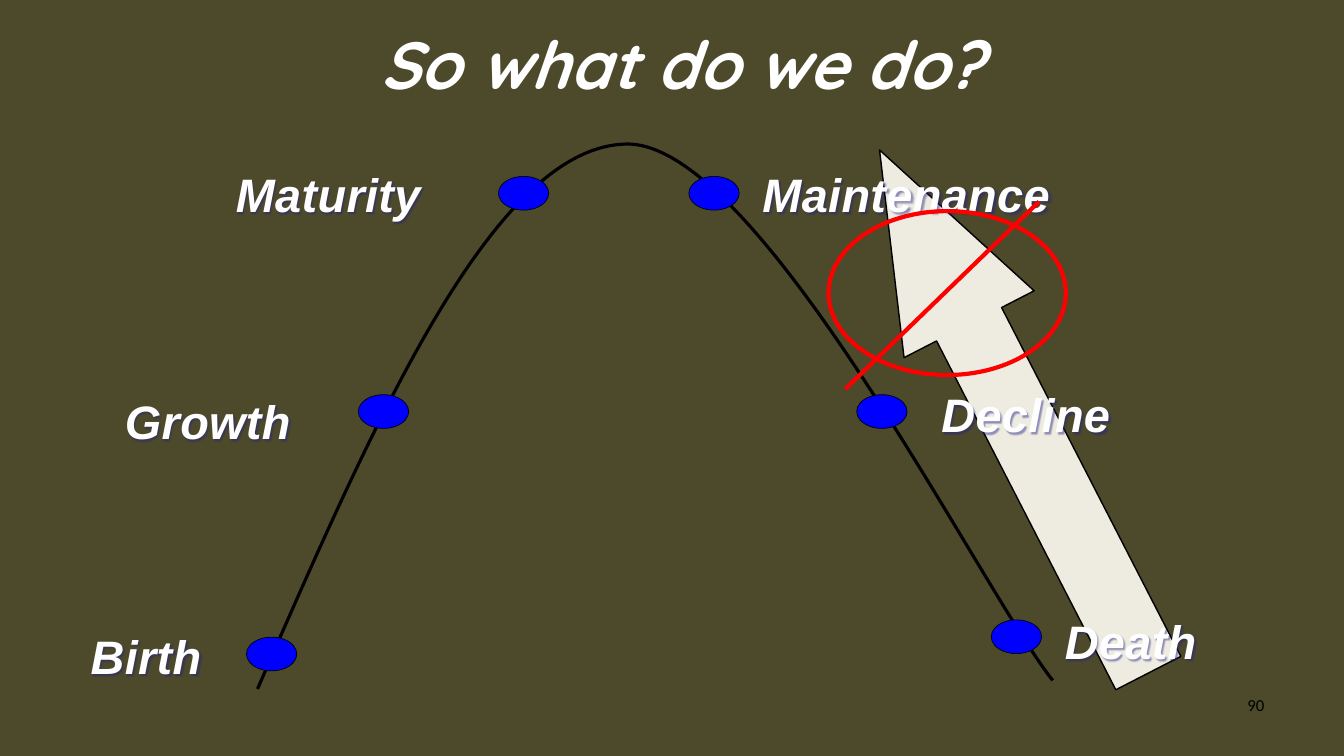
from dataclasses import dataclass

from lxml import etree
from pptx import Presentation
from pptx import util as u
from pptx.dml.color import RGBColor
from pptx.enum import shapes, text
from pptx.oxml import parse_xml
from pptx.oxml.ns import nsdecls, qn


@dataclass
class Theme:
    olive: str = "4D492B"
    cream: str = "EEECE1"
    white: str = "FFFFFF"
    soft_white: str = "FEFEFE"
    black: str = "000000"
    blue: str = "0000FF"
    red: str = "FF0000"
    shadow: str = "202086"
    title_size: int = 95
    label_size: int = 67
    number_size: int = 24


theme = Theme()


def add_text(page, words, left, top, width, height, *, font, size, color,
             bold=False, align=text.PP_ALIGN.LEFT, anchor=text.MSO_ANCHOR.TOP,
             wrap=False, spacing=None, shadow=None):
    box = page.shapes.add_textbox(u.Cm(left), u.Cm(top), u.Cm(width), u.Cm(height))
    frame = box.text_frame
    frame.word_wrap = wrap
    frame.vertical_anchor = anchor
    frame.margin_left = frame.margin_right = u.Cm(0.61)
    frame.margin_top = frame.margin_bottom = u.Cm(0.3)
    para = frame.paragraphs[0]
    para.alignment = align
    span = para.add_run()
    span.text = words
    span.font.name = font
    span.font.size = u.Pt(size)
    span.font.bold = span.font.italic = bold
    span.font.color.rgb = RGBColor.from_string(color)
    if spacing:
        span.font._element.set("spc", str(spacing))
    if shadow:
        box._element.spPr.append(parse_xml(
            f'<a:effectLst {nsdecls("a")}><a:outerShdw blurRad="25400" dist="38100" '
            f'dir="2700000" algn="tl" rotWithShape="0"><a:srgbClr val="{shadow}">'
            '<a:alpha val="45000"/></a:srgbClr></a:outerShdw></a:effectLst>'))
    return box


def paint(shape, line, width, fill=None):
    shape.shadow.inherit = False
    shape.line.color.rgb = RGBColor.from_string(line)
    shape.line.width = u.Pt(width)
    if fill:
        shape.fill.solid()
        shape.fill.fore_color.rgb = RGBColor.from_string(fill)
    else:
        shape.fill.background()


deck = Presentation()
deck.slide_width, deck.slide_height = u.Cm(67.74), u.Cm(38.1)
page = deck.slides.add_slide(deck.slide_layouts[6])
page.background.fill.solid()
page.background.fill.fore_color.rgb = RGBColor.from_string(theme.olive)

add_text(page, "90", 48.54, 34.72, 15.8, 2.64, font="Calibri",
         size=theme.number_size, color=theme.black, align=text.PP_ALIGN.RIGHT, wrap=True)

arrow = page.shapes.add_shape(shapes.MSO_SHAPE.UP_ARROW,
                              u.Cm(47.42), u.Cm(5.92), u.Cm(7.37), u.Cm(29.64))
arrow.adjustments[0], arrow.adjustments[1] = 0.5, 1.34
arrow.rotation = 332.8
paint(arrow, theme.black, 2, theme.cream)

add_text(page, "So what do we do?", 3.81, 0, 61.11, 6.35, font="Quicksand",
         size=theme.title_size, color=theme.white, bold=True, wrap=True,
         align=text.PP_ALIGN.CENTER, anchor=text.MSO_ANCHOR.MIDDLE)

curve_points = [(12.98, 34.72), (18.95, 21.03), (24.92, 7.34), (31.6, 7.26),
                (38.28, 7.19), (49.48, 29.79), (53.06, 34.29)]
start, *controls = [(u.Cm(x), u.Cm(y)) for x, y in curve_points]
builder = page.shapes.build_freeform(*start)
builder.add_line_segments(controls, close=False)
curve = builder.convert_to_shape()
paint(curve, theme.black, 4.5)
segments = list(curve._element.iter(qn("a:lnTo")))
outline = segments[0].getparent()
for first in range(0, len(segments), 3):
    bend = etree.SubElement(outline, qn("a:cubicBezTo"))
    for segment in segments[first:first + 3]:
        bend.append(segment[0])
        outline.remove(segment)

stages = [
    ("Birth", 3.96, 31.34, 7.44, 12.42, 32.11),
    ("Growth", 5.69, 19.48, 10.24, 18.06, 19.89),
    ("Maturity", 11.28, 8.05, 11.2, 25.12, 8.89),
    ("Maintenance", 37.82, 8.05, 16.99, 34.72, 8.89),
    ("Decline", 46.84, 19.15, 10.39, 43.18, 19.89),
    ("Death", 53.06, 30.58, 8.51, 49.96, 31.24),
]
for name, left, top, width, dot_left, dot_top in stages:
    label = add_text(page, name, left, top, width, 3.48, font="Arial",
                     size=theme.label_size, color=theme.soft_white, bold=True,
                     spacing=50, shadow=theme.shadow)
    label.text_frame.auto_size = text.MSO_AUTO_SIZE.SHAPE_TO_FIT_TEXT
    dot = page.shapes.add_shape(shapes.MSO_SHAPE.OVAL, u.Cm(dot_left), u.Cm(dot_top),
                                u.Cm(2.54), u.Cm(1.7))
    paint(dot, theme.black, 1, theme.blue)

ban = page.shapes.add_group_shape()
ring = ban.shapes.add_shape(shapes.MSO_SHAPE.OVAL,
                            u.Cm(41.76), u.Cm(10.64), u.Cm(11.96), u.Cm(8.26))
paint(ring, theme.red, 6)
slash = ban.shapes.add_connector(shapes.MSO_CONNECTOR.STRAIGHT,
                                 u.Cm(42.6), u.Cm(19.61), u.Cm(52.37), u.Cm(10.16))
slash.line.color.rgb = RGBColor.from_string(theme.red)
slash.line.width = u.Pt(6)
etree.SubElement(slash._element.spPr, qn("a:effectLst"))

deck.save("out.pptx")
